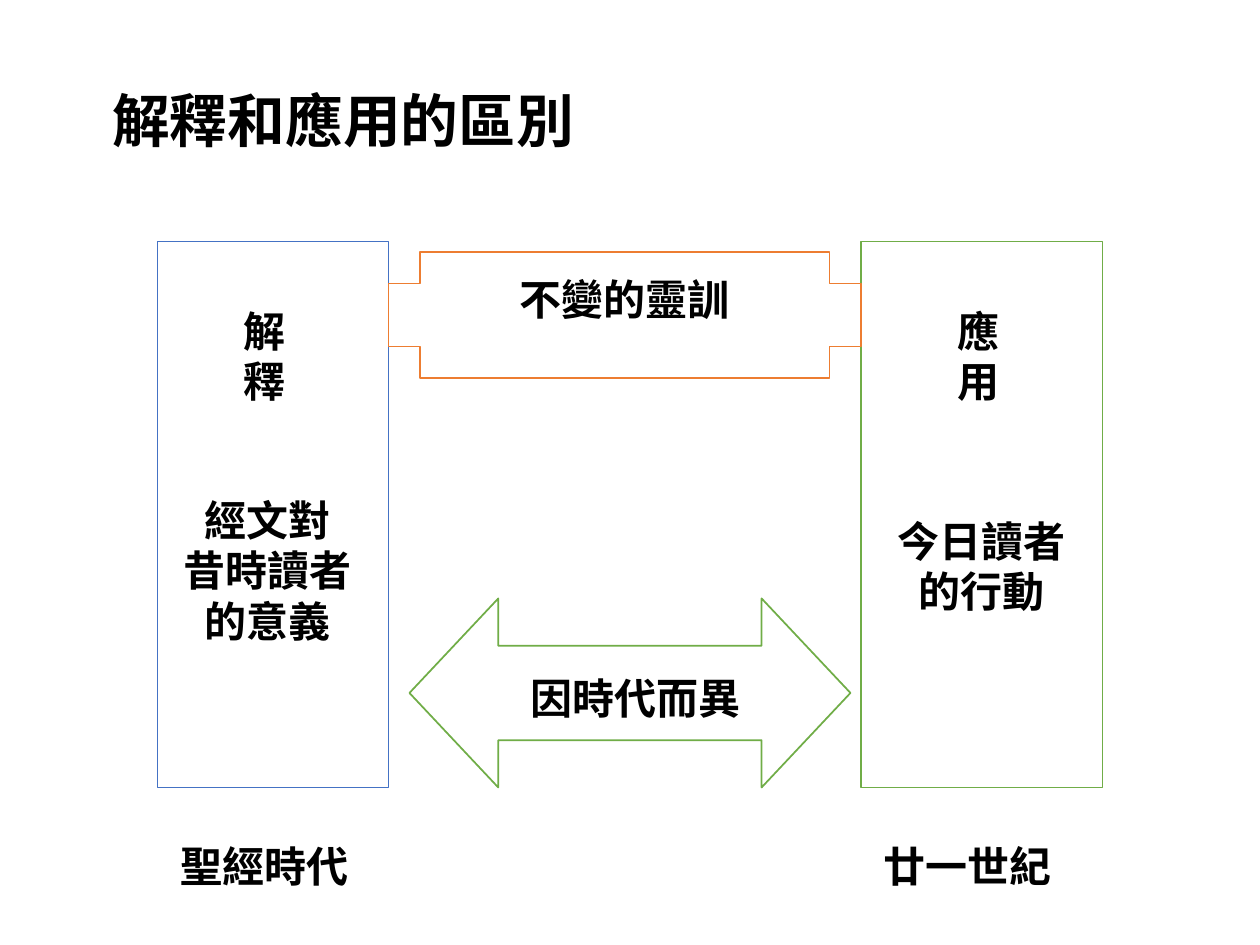
from lxml.etree import SubElement
from pptx import Presentation
from pptx.dml.color import RGBColor
from pptx.enum.shapes import MSO_SHAPE as Shape
from pptx.enum.text import MSO_ANCHOR as Anchor, PP_ALIGN as Align
from pptx.oxml.ns import qn
from pptx.util import Pt

BLUE, GREEN, ORANGE = "4472C4", "70AD47", "ED7D31"
WHITE, BLACK = "FFFFFF", "000000"
CHINESE_FONT = "Noto Sans CJK TC"
LATIN_FONT = "Times New Roman"
LABEL_FORMAT = {"size": Pt(24), "bold": True, "name": LATIN_FONT}
TITLE_FORMAT = {"size": Pt(33), "bold": True, "name": "Noto Sans Mono"}


def color(hex_string):
    return RGBColor.from_string(hex_string)


def add_outline(slide, preset, box, line_color, adjustments=()):
    """Add a white shape with a thin coloured border; box is in points."""
    outline = slide.shapes.add_shape(preset, *map(Pt, box))
    for index, value in enumerate(adjustments):
        outline.adjustments[index] = value
    outline.shadow.inherit = False
    outline.fill.solid()
    outline.fill.fore_color.rgb = color(WHITE)
    outline.line.color.rgb = color(line_color)
    outline.line.width = Pt(1)


def add_text(slide, wording, box, font_format, align, line_spacing, **frame_format):
    frame = slide.shapes.add_textbox(*map(Pt, box)).text_frame
    for attribute, value in {"word_wrap": True, **frame_format}.items():
        setattr(frame, attribute, value)
    paragraph = frame.paragraphs[0]
    paragraph.alignment = align
    paragraph.line_spacing = line_spacing
    run = paragraph.add_run()
    run.text = wording
    for attribute, value in font_format.items():
        setattr(run.font, attribute, value)
    run.font.color.rgb = color(BLACK)
    SubElement(run.font._element, qn("a:ea")).set("typeface", CHINESE_FONT)


def add_label(slide, wording, box, align=Align.CENTER, font=LATIN_FONT):
    add_text(slide, wording, box, {**LABEL_FORMAT, "name": font}, align,
             Pt(28.8), margin_top=Pt(6.5), margin_bottom=Pt(0))


def main():
    deck = Presentation()
    deck.slide_width, deck.slide_height = Pt(720), Pt(540)
    slide = deck.slides.add_slide(deck.slide_layouts[6])

    add_text(slide, "解釋和應用的區別", (57, 8, 612, 126), TITLE_FORMAT,
             Align.LEFT, 0.9, vertical_anchor=Anchor.MIDDLE)

    add_outline(slide, Shape.RECTANGLE, (90, 138, 132, 312), BLUE)
    add_outline(slide, Shape.RECTANGLE, (492, 138, 138, 312), GREEN)
    add_outline(slide, Shape.CROSS, (222, 144, 270, 72), ORANGE, [0.25])
    add_outline(slide, Shape.LEFT_RIGHT_ARROW, (234, 342, 252, 108), GREEN,
                [0.5, 0.47])

    add_label(slide, "解釋", (132, 168, 48, 65), Align.LEFT, CHINESE_FONT)
    add_label(slide, "應用", (540, 168, 42, 65), Align.LEFT)
    add_label(slide, "不變的靈訓", (270, 150, 174, 36))
    add_label(slide, "因時代而異", (288, 378, 150, 36))
    add_label(slide, "經文對 昔時讀者的意義", (96, 276, 114, 94))
    add_label(slide, "今日讀者的行動", (498, 288, 126, 65))
    add_label(slide, "聖經時代", (96, 474, 126, 36), Align.LEFT)
    add_label(slide, "廿一世紀", (498, 474, 132, 36), Align.LEFT)

    deck.save("out.pptx")


if __name__ == "__main__":
    main()
